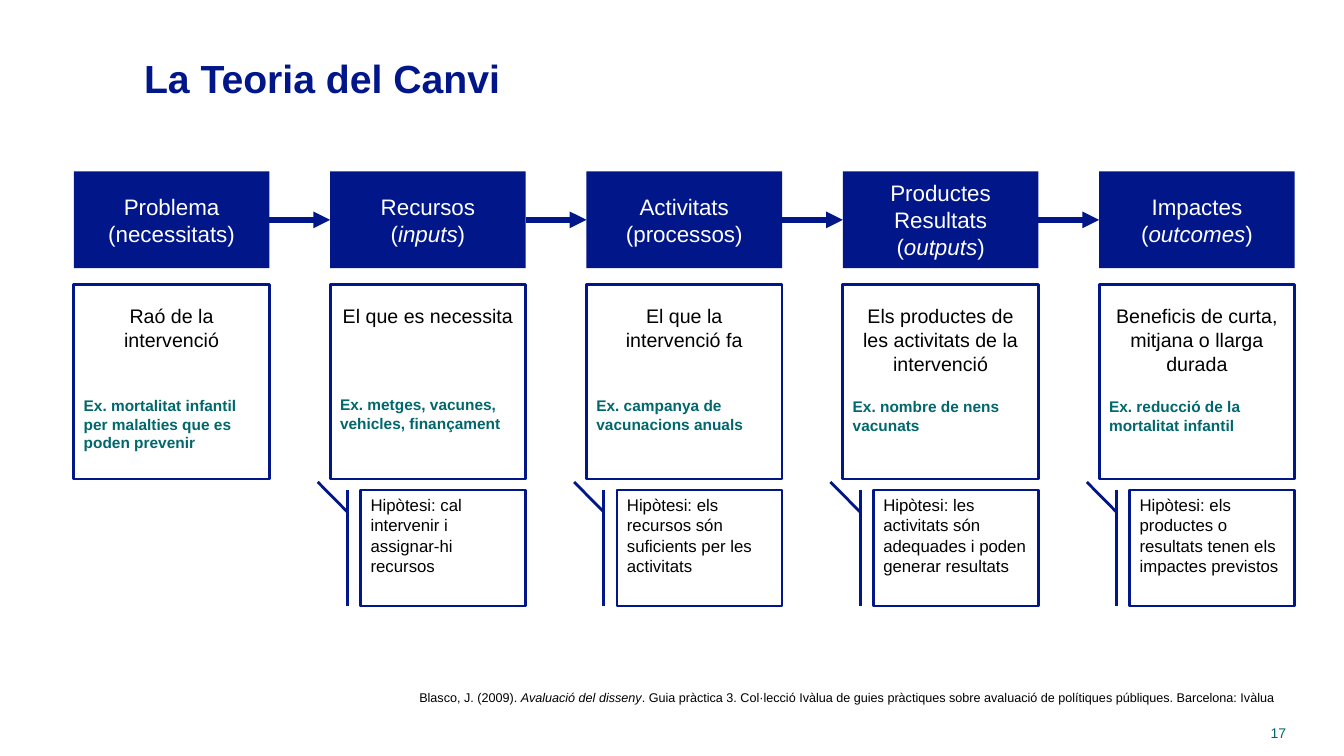
from pptx import Presentation
from pptx.dml.color import RGBColor
from pptx.enum.shapes import MSO_CONNECTOR, MSO_SHAPE
from pptx.enum.text import MSO_ANCHOR, PP_ALIGN
from pptx.oxml.ns import qn
from pptx.util import Cm, Pt
from lxml.etree import SubElement

NAVY, TEAL, BLACK, WHITE = "001689", "00676C", "000000", "FFFFFF"
LEFT, STEP, WIDTH = 1.86, 6.46, 4.93
INDENT = 0.77
LINE = 16.1  # height in points of one 14 pt line
ROOM = 4  # lines kept for the meaning above the example

# heading, meaning, its line count, example, hypothesis
STAGES = [
    (["Problema", "(necessitats)"], "Raó de la intervenció", 2,
     "Ex. mortalitat infantil per malalties que es poden prevenir", None),
    (["Recursos", "(*inputs*)"], "El que es necessita", 1,
     "Ex. metges, vacunes, vehicles, finançament",
     "Hipòtesi: cal intervenir i assignar-hi recursos"),
    (["Activitats", "(processos)"], "El que la intervenció fa", 2,
     "Ex. campanya de vacunacions anuals",
     "Hipòtesi: els recursos són suficients per les activitats"),
    (["Productes", "Resultats", "(*outputs*)"],
     "Els productes de les activitats de la intervenció", 3,
     "Ex. nombre de nens vacunats",
     "Hipòtesi: les activitats són adequades i poden generar resultats"),
    (["Impactes", "(*outcomes*)"],
     "Beneficis de curta, mitjana o llarga durada", 3,
     "Ex. reducció de la mortalitat infantil",
     "Hipòtesi: els productes o resultats tenen els impactes previstos"),
]
SOURCE = ("Blasco, J. (2009). *Avaluació del disseny*. Guia pràctica 3. "
          "Col·lecció Ivàlua de guies pràctiques sobre avaluació de "
          "polítiques públiques. Barcelona: Ivàlua")


def color(code):
    return RGBColor.from_string(code)


class Deck:
    font = "Arial"

    def __init__(self, slide):
        self.slide = slide

    def put(self, para, text, size, ink, align=PP_ALIGN.LEFT, bold=False):
        """Fill a paragraph; text between asterisks turns italic."""
        para.alignment = align
        font = para.font
        font.name, font.size, font.bold = self.font, Pt(size), bold
        font.color.rgb = color(ink)
        for pos, part in enumerate(text.split("*")):
            run = para.add_run()
            run.text = part
            if pos % 2:
                run.font.italic = True

    def label(self, area, text, size, ink, **style):
        box = self.slide.shapes.add_textbox(*map(Cm, area))
        frame = box.text_frame
        frame.word_wrap = True
        self.put(frame.paragraphs[0], text, size, ink, **style)
        return frame

    def box(self, kind, area, fill, edge=None):
        shape = self.slide.shapes.add_shape(kind, *map(Cm, area))
        shape.shadow.inherit = False
        shape.fill.solid()
        shape.fill.fore_color.rgb = color(fill)
        if edge:
            shape.line.color.rgb = color(edge)
            shape.line.width = Pt(2)
        else:
            shape.line.fill.background()
        shape.text_frame.word_wrap = True
        shape.text_frame.vertical_anchor = MSO_ANCHOR.TOP
        return shape

    def head(self, left, lines):
        shape = self.box(MSO_SHAPE.RECTANGLE, (left, 4.32, WIDTH, 2.44), NAVY)
        frame = shape.text_frame
        frame.vertical_anchor = MSO_ANCHOR.MIDDLE
        for pos, text in enumerate(lines):
            para = frame.add_paragraph() if pos else frame.paragraphs[0]
            self.put(para, text, 16, WHITE, PP_ALIGN.CENTER)
        return shape

    def detail(self, left, text, count, sample):
        area = (left, 7.17, WIDTH, 4.9)
        frame = self.box(MSO_SHAPE.RECTANGLE, area, WHITE, NAVY).text_frame
        frame.margin_top = Cm(0.5)
        self.put(frame.paragraphs[0], text, 14, BLACK, PP_ALIGN.CENTER)
        para = frame.add_paragraph()
        para.space_before = Pt(LINE * (ROOM - count))
        self.put(para, sample, 11, TEAL, bold=True)

    def callout(self, left, text):
        area = (left + INDENT, 12.35, WIDTH - INDENT, 2.92)
        kind = MSO_SHAPE.LINE_CALLOUT_1_BORDER_AND_ACCENT_BAR
        shape = self.box(kind, area, WHITE, NAVY)
        for pos, value in enumerate((0.19, -0.08, -0.07, -0.26)):
            shape.adjustments[pos] = value
        self.put(shape.text_frame.paragraphs[0], text, 12, BLACK)

    def arrow(self, start, end):
        link = self.slide.shapes.add_connector(MSO_CONNECTOR.STRAIGHT, 0, 0, 0, 0)
        link.begin_connect(start, 3)
        link.end_connect(end, 1)
        link.line.color.rgb = color(NAVY)
        link.line.width = Pt(4)
        props = link.element.spPr
        SubElement(props.find(qn("a:ln")), qn("a:tailEnd"), type="triangle")
        SubElement(props, qn("a:effectLst"))


def main():
    show = Presentation()
    show.slide_width, show.slide_height = Cm(33.87), Cm(19.05)
    deck = Deck(show.slides.add_slide(show.slide_layouts[6]))

    title = deck.label((3.38, 1.17, 28.85, 1.57), "La Teoria del Canvi",
                       28, NAVY, bold=True)
    title.vertical_anchor = MSO_ANCHOR.MIDDLE

    last = None
    for pos, (lines, text, count, sample, guess) in enumerate(STAGES):
        left = LEFT + pos * STEP
        head = deck.head(left, lines)
        deck.detail(left, text, count, sample)
        if last:
            deck.arrow(last, head)
        if guess:
            deck.callout(left, guess)
        last = head

    deck.label((7.16, 17.27, 25.2, 0.64), SOURCE, 9, BLACK,
               align=PP_ALIGN.RIGHT)
    deck.label((30.53, 18.14, 2.13, 0.74), "17", 10, TEAL,
               align=PP_ALIGN.RIGHT)
    show.save("out.pptx")


if __name__ == "__main__":
    main()
